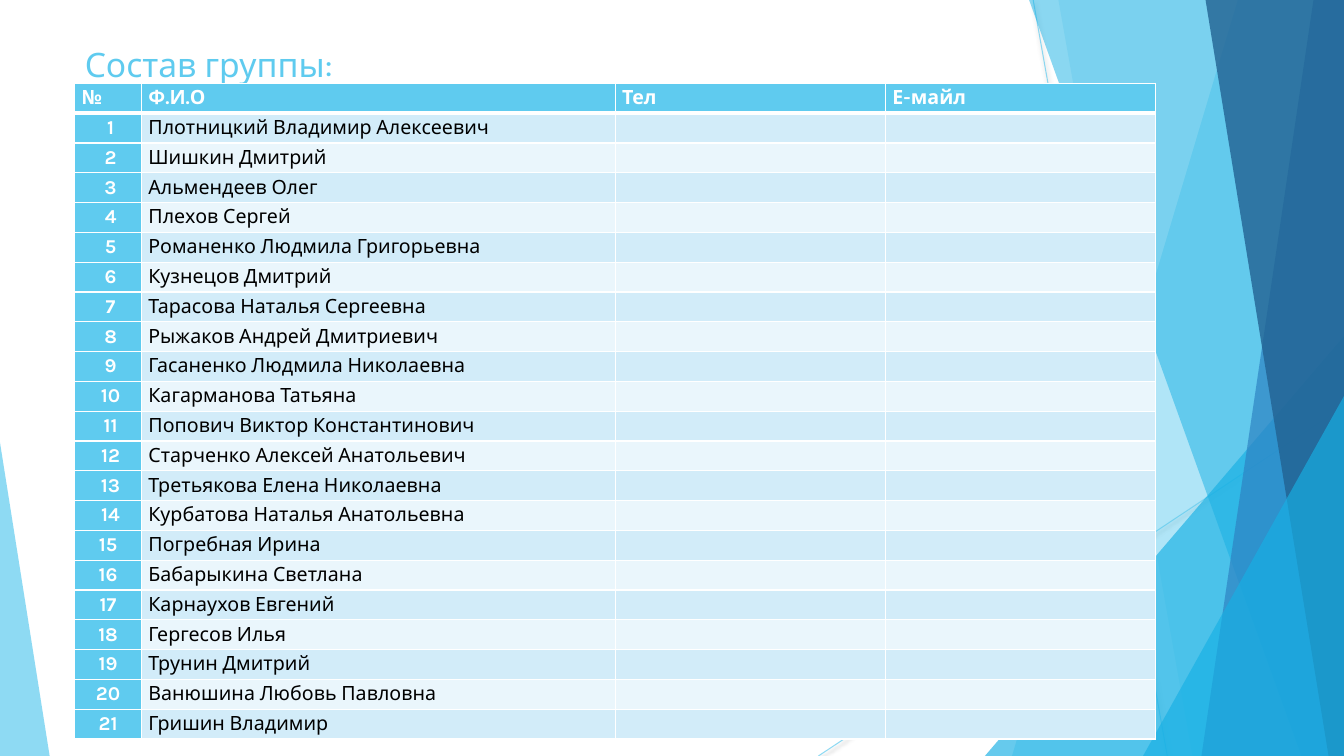
"""Build the group roster slide with its faceted side panels."""
from collections import namedtuple
from dataclasses import dataclass

from lxml import etree
from pptx import Presentation
from pptx.dml.color import RGBColor
from pptx.enum.shapes import MSO_CONNECTOR, MSO_SHAPE
from pptx.enum.text import MSO_ANCHOR, PP_ALIGN
from pptx.oxml.ns import qn
from pptx.util import Pt

STRAIGHT = MSO_CONNECTOR.STRAIGHT
TRIANGLE = MSO_SHAPE.ISOSCELES_TRIANGLE
TOP = MSO_ANCHOR.TOP
LEFT, CENTER = PP_ALIGN.LEFT, PP_ALIGN.CENTER

Box = namedtuple("Box", "left top width height")


@dataclass(frozen=True)
class Theme:
    """Colours, font and type sizes of the slide."""
    sky: str = "5FCBEF"
    cyan: str = "17B0E4"
    blue: str = "2E83C3"
    navy: str = "226292"
    band_dark: str = "D2ECF9"
    band_light: str = "EAF6FC"
    white: str = "FFFFFF"
    black: str = "000000"
    font: str = "Karla"
    title_size: int = 24
    table_size: int = 14


THEME = Theme()
HEADINGS = ["№", "Ф.И.О", "Тел", "Е-майл"]
COLUMN_WIDTHS = [47.5, 338.5, 193, 193]
MEMBERS = [
    "Плотницкий Владимир Алексеевич", "Шишкин Дмитрий", "Альмендеев Олег",
    "Плехов Сергей", "Романенко Людмила Григорьевна", "Кузнецов Дмитрий",
    "Тарасова Наталья Сергеевна", "Рыжаков Андрей Дмитриевич",
    "Гасаненко Людмила Николаевна", "Кагарманова Татьяна",
    "Попович Виктор Константинович", "Старченко Алексей Анатольевич",
    "Третьякова Елена Николаевна", "Курбатова Наталья Анатольевна",
    "Погребная Ирина", "Бабарыкина Светлана", "Карнаухов Евгений",
    "Гергесов Илья", "Трунин Дмитрий", "Ванюшина Любовь Павловна",
    "Гришин Владимир",
]
LAST_INDENTED_NUMBER = 14


def set_all(target, values):
    """Set each attribute of the target from a dict."""
    for key, value in values.items():
        setattr(target, key, value)


def add_color(parent, color, opacity=100):
    """Append a colour element with its opacity in percent."""
    tint = etree.SubElement(parent, qn("a:srgbClr"), val=color)
    etree.SubElement(tint, qn("a:alpha"), val=str(opacity * 1000))


def paint(shape, color, opacity):
    """Give a shape a see-through fill without outline or shadow."""
    shape.shadow.inherit = False
    shape.line.fill.background()
    shape.fill.solid()
    shape.fill.fore_color.rgb = RGBColor.from_string(color)
    tint = shape.element.spPr.find(qn("a:solidFill"))[0]
    etree.SubElement(tint, qn("a:alpha"), val=str(opacity * 1000))


def add_ray(slide, box, start, end):
    """Draw a thin shadowed line between two points of the box."""
    ray = slide.shapes.add_connector(
        STRAIGHT, Pt(box.left + start[0]), Pt(box.top + start[1]),
        Pt(box.left + end[0]), Pt(box.top + end[1]))
    ray.line.width = Pt(0.75)
    ray.line.color.rgb = RGBColor.from_string(THEME.sky)
    properties = ray.element.spPr
    tint = properties.find(qn("a:ln")).find(qn("a:solidFill"))[0]
    etree.SubElement(tint, qn("a:alpha"), val="70000")
    effects = etree.SubElement(properties, qn("a:effectLst"))
    shadow = etree.SubElement(
        effects, qn("a:outerShdw"), blurRad=str(Pt(3.1)), dist=str(Pt(1.6)),
        dir="5400000", rotWithShape="0")
    add_color(shadow, THEME.black, 38)


def add_facet(slide, box, top_x, bottom_x, color, opacity):
    """Fill the box from a slanted left edge to its right side."""
    right, bottom = box.left + box.width, box.top + box.height
    outline = slide.shapes.build_freeform(Pt(box.left + top_x), Pt(box.top))
    corners = [(right, box.top), (right, bottom), (box.left + bottom_x, bottom)]
    outline.add_line_segments([(Pt(x), Pt(y)) for x, y in corners])
    paint(outline.convert_to_shape(), color, opacity)


def add_corner(slide, box, left, top, color, opacity, apex=1):
    """Fill the lower right part of the box with a right triangle."""
    corner = slide.shapes.add_shape(
        TRIANGLE, Pt(box.left + left), Pt(box.top + top),
        Pt(box.width - left), Pt(box.height - top))
    corner.adjustments[0] = apex
    paint(corner, color, opacity)


def add_right_panel(slide, box):
    """Layer the rays, facets and corners on the right."""
    add_ray(slide, box, (34.5, 0), (130.3, box.height))
    add_ray(slide, box, (box.width, 290.2), (-118.9, box.height))
    layers = [
        (add_facet, 180.7, 19.4, THEME.sky, 36),
        (add_facet, 52.5, 148.3, THEME.sky, 20),
        (add_corner, 0, 240, THEME.cyan, 66),
        (add_facet, 31.6, 226, THEME.cyan, 50),
        (add_facet, 234.7, 154.7, THEME.blue, 70),
        (add_facet, 157.6, 245.5, THEME.navy, 80),
        (add_corner, 113, 283, THEME.cyan, 66),
    ]
    for add_layer, *values in layers:
        add_layer(slide, box, *values)


def write(paragraph, text, size, color, bold=False):
    """Write one run in the theme font."""
    run = paragraph.add_run()
    run.text = text
    set_all(run.font, {"name": THEME.font, "size": Pt(size), "bold": bold})
    run.font.color.rgb = RGBColor.from_string(color)


def add_title(slide, box, text):
    """Place the slide title."""
    frame = slide.shapes.add_textbox(*map(Pt, box)).text_frame
    set_all(frame, {"word_wrap": True, "vertical_anchor": TOP})
    write(frame.paragraphs[0], text, THEME.title_size, THEME.sky)


def add_borders(cell, bottom_width):
    """Draw white cell borders, with the given width below."""
    properties = cell._tc.get_or_add_tcPr()
    sides = {"a:lnL": 1, "a:lnR": 1, "a:lnT": 1, "a:lnB": bottom_width}
    for index, (side, width) in enumerate(sides.items()):
        border = etree.Element(qn(side), w=str(Pt(width)))
        add_color(etree.SubElement(border, qn("a:solidFill")), THEME.white)
        properties.insert(index, border)


def fill_cell(cell, text, fill, color, bold, align, bottom_width):
    """Format one roster cell and write its text."""
    set_all(cell, {"margin_left": Pt(5), "margin_right": Pt(5),
                   "margin_top": 0, "margin_bottom": 0})
    cell.fill.solid()
    cell.fill.fore_color.rgb = RGBColor.from_string(fill)
    add_borders(cell, bottom_width)
    entry = cell.text_frame.paragraphs[0]
    set_all(entry, {"alignment": align, "line_spacing": 1.15})
    if text:
        write(entry, text, THEME.table_size, color, bold)
    else:
        etree.SubElement(entry._p, qn("a:endParaRPr"),
                         sz=str(THEME.table_size * 100))


def add_roster(slide, box):
    """Place the table of group members."""
    rows = [HEADINGS]
    for number, member in enumerate(MEMBERS, 1):
        label = f" {number}" if number <= LAST_INDENTED_NUMBER else str(number)
        rows.append([label, member, "", ""])
    roster = slide.shapes.add_table(
        len(rows), len(HEADINGS), *map(Pt, box)).table
    for column, width in zip(roster.columns, COLUMN_WIDTHS):
        column.width = Pt(width)
    for r, row in enumerate(rows):
        roster.rows[r].height = Pt(box.height / len(rows))
        band = THEME.band_dark if r % 2 else THEME.band_light
        for c, text in enumerate(row):
            accent = r == 0 or c == 0
            fill_cell(roster.cell(r, c), text,
                      THEME.sky if accent else band,
                      THEME.white if accent else THEME.black, accent,
                      CENTER if r and c == 0 else LEFT, 1 if r else 3)


def main():
    """Build and save the slide."""
    deck = Presentation()
    set_all(deck, {"slide_width": Pt(960), "slide_height": Pt(540)})
    slide = deck.slides.add_slide(deck.slide_layouts[6])
    add_right_panel(slide, Box(703.5, 0, 256.5, 540))
    add_corner(slide, Box(0, 316, 35.5, 224), 0, 0, THEME.sky, 70, apex=0)
    add_title(slide, Box(53.5, 28, 677, 104), "Состав группы:")
    add_roster(slide, Box(53.5, 59.5, 772, 468.6))
    deck.save("out.pptx")


if __name__ == "__main__":
    main()
